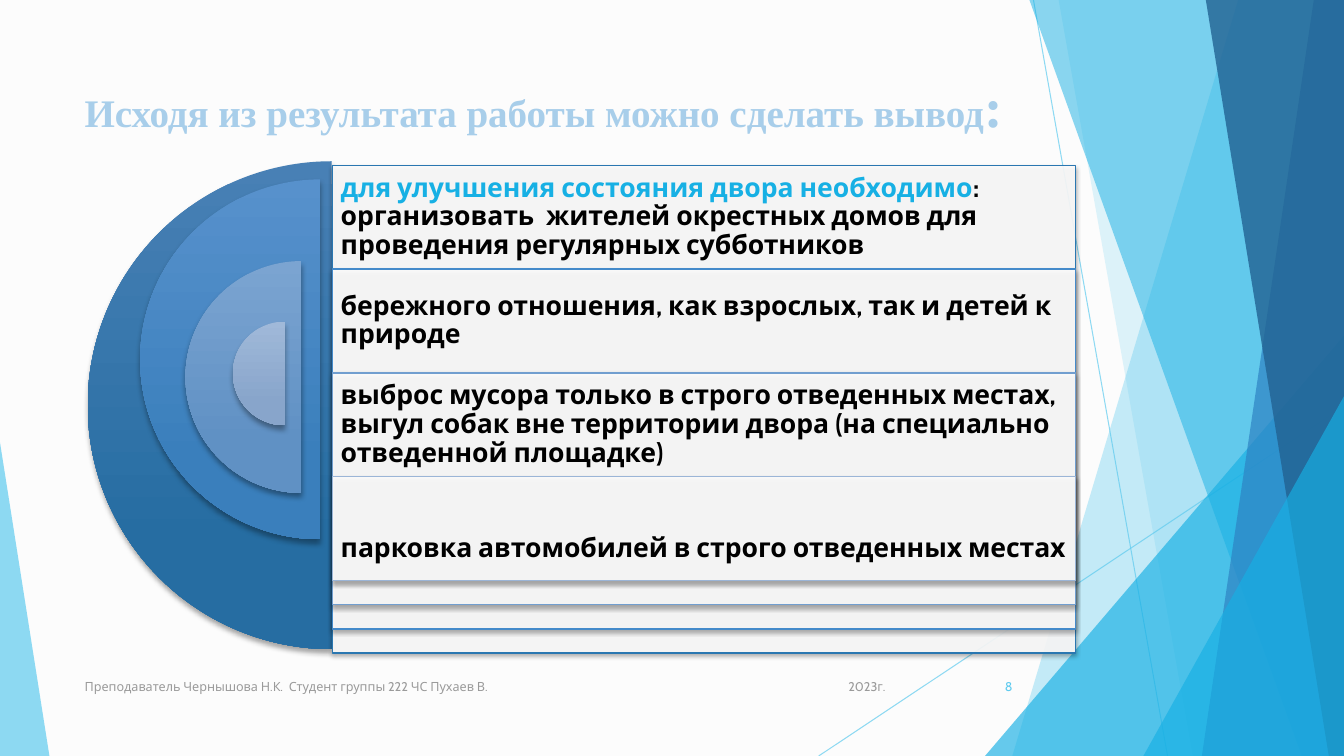
from dataclasses import dataclass

from lxml import etree
from pptx import Presentation
from pptx import util as u
from pptx.dml.color import RGBColor
from pptx.enum import shapes, text
from pptx.oxml.ns import qn

WIDTH, HEIGHT = 13.33, 7.5


@dataclass(frozen=True)
class Theme:
    background: str = "FCFCFC"
    sky: str = "5FCBEF"
    cyan: str = "17B0E4"
    blue: str = "2E83C3"
    navy: str = "226292"
    title: str = "A8CEEA"
    body: str = "000000"
    footer: str = "9A9A9A"
    black: str = "000000"
    serif: str = "Times New Roman"
    sans: str = "Cabin"
    title_size: float = 27.9
    colon_size: float = 39.6
    body_size: float = 19
    footer_size: float = 9


class SlideBuilder:
    def __init__(self, deck, theme):
        self.theme = theme
        self.page = deck.slides.add_slide(deck.slide_layouts[6])
        background = self.page.background.fill
        background.solid()
        background.fore_color.rgb = RGBColor.from_string(theme.background)

    def set_alpha(self, parent, percent):
        """Make every plain colour below parent partly transparent."""
        for color in parent.iter(qn("a:srgbClr")):
            etree.SubElement(color, qn("a:alpha"), val=str(percent * 1000))

    def paint(self, shape, color, alpha):
        shape.shadow.inherit = False
        shape.fill.solid()
        shape.fill.fore_color.rgb = RGBColor.from_string(color)
        self.set_alpha(shape.fill._xPr.find(qn("a:solidFill")), alpha)
        shape.line.fill.background()

    def drop_shadow(self, shape, blur, distance):
        shape.shadow.inherit = False
        effects = shape._element.spPr.find(qn("a:effectLst"))
        shadow = etree.SubElement(
            effects, qn("a:outerShdw"), blurRad=str(u.Pt(blur)),
            dist=str(u.Pt(distance)), dir="5400000", rotWithShape="0")
        etree.SubElement(shadow, qn("a:srgbClr"), val=self.theme.black)
        self.set_alpha(shadow, 35)

    def preset(self, kind, left, top, width, height):
        return self.page.shapes.add_shape(
            kind, u.Inches(left), u.Inches(top), u.Inches(width), u.Inches(height))

    def ray(self, start, end):
        line = self.page.shapes.add_connector(
            shapes.MSO_CONNECTOR.STRAIGHT, *map(u.Inches, start + end))
        line.line.color.rgb = RGBColor.from_string(self.theme.sky)
        line.line.width = u.Pt(0.75)
        properties = line._element.spPr
        self.set_alpha(properties, 70)
        etree.SubElement(properties, qn("a:effectLst"))

    def facet(self, top_left, bottom_left, color, alpha):
        """Fill the area from a slanted edge to the right side of the slide."""
        corners = [(WIDTH, 0), (WIDTH, HEIGHT), (bottom_left, HEIGHT)]
        outline = self.page.shapes.build_freeform(u.Inches(top_left), 0)
        outline.add_line_segments([(u.Inches(x), u.Inches(y)) for x, y in corners])
        self.paint(outline.convert_to_shape(), color, alpha)

    def corner(self, left, top, width, apex, color, alpha):
        triangle = self.preset(shapes.MSO_SHAPE.ISOSCELES_TRIANGLE,
                               left, top, width, HEIGHT - top)
        triangle.adjustments[0] = apex
        self.paint(triangle, color, alpha)

    def half_disc(self, left, top, diameter, light, dark):
        disc = self.preset(shapes.MSO_SHAPE.PIE, left, top, diameter, diameter)
        disc.adjustments[0], disc.adjustments[1] = 54, 162
        disc.fill.gradient()
        disc.fill.gradient_angle = 270
        for stop, color, position in zip(disc.fill.gradient_stops, (light, dark), (0, 0.78)):
            stop.color.rgb = RGBColor.from_string(color)
            stop.position = position
        disc.line.fill.background()
        self.drop_shadow(disc, 4, 3)

    def panel(self, left, top, width, height, border):
        panel = self.preset(shapes.MSO_SHAPE.RECTANGLE, left, top, width, height)
        self.paint(panel, self.theme.background, 90)
        panel.line.color.rgb = RGBColor.from_string(border)
        panel.line.width = u.Pt(1)
        self.drop_shadow(panel, 3, 2)

    def label(self, left, top, width, height, spans, font, bold=False,
              anchor=text.MSO_ANCHOR.MIDDLE, align=text.PP_ALIGN.LEFT):
        """Add one paragraph made of (wording, size, colour) spans."""
        box = self.page.shapes.add_textbox(
            u.Inches(left), u.Inches(top), u.Inches(width), u.Inches(height))
        frame = box.text_frame
        frame.word_wrap = True
        frame.vertical_anchor = anchor
        para = frame.paragraphs[0]
        para.alignment = align
        for wording, size, color in spans:
            span = para.add_run()
            span.text = wording
            span.font.size = u.Pt(size)
            span.font.name = font
            span.font.bold = bold
            span.font.color.rgb = RGBColor.from_string(color)
        return frame

    def conclusion(self, left, top, width, height, spans, top_inset):
        frame = self.label(left, top, width, height, spans, self.theme.sans, bold=True)
        frame.margin_left = frame.margin_right = frame.margin_bottom = u.Inches(0.08)
        frame.margin_top = u.Inches(top_inset)
        frame.paragraphs[0].line_spacing = 0.9


def add_backdrop(slide):
    theme = slide.theme
    slide.ray((10.25, 0), (11.58, HEIGHT))
    slide.ray((WIDTH, 4.03), (8.12, HEIGHT))
    slide.facet(12.28, 10.04, theme.sky, 36)
    slide.facet(10.5, 11.83, theme.sky, 20)
    slide.corner(9.77, 3.33, 3.56, 1, theme.cyan, 66)
    slide.facet(10.21, 12.91, theme.cyan, 50)
    slide.facet(13.03, 11.92, theme.blue, 70)
    slide.facet(11.96, 13.18, theme.navy, 80)
    slide.corner(11.34, 3.93, 1.99, 1, theme.cyan, 66)
    slide.corner(0, 4.39, 0.49, 0, theme.sky, 70)


def add_conclusions(slide):
    theme = slide.theme
    left, first_top, width, row, step = 3.3, 1.64, 7.37, 1.03, 1.27
    # disc left, disc top, light, dark, border, top inset, (wording, colour) spans
    rows = [
        (0.87, 1.6, "4880B5", "266DA2", "2A77B1", 0.08,
         [("для улучшения состояния двора необходимо", theme.cyan),
          (": организовать  жителей окрестных домов для проведения регулярных субботников",
           theme.body)]),
        (1.39, 1.78, "5791CC", "3A7FBC", "448ACA", 0.08,
         [("бережного отношения, как взрослых, так и детей к природе", theme.body)]),
        (1.84, 2.59, "7BA4D1", "6091C4", "719ECF", 0.08,
         [("выброс мусора только в строго отведенных местах, выгул собак вне "
           "территории двора (на специально отведенной площадке)", theme.body)]),
        (2.31, 3.19, "A0B9D9", "88A5CB", "9BB5D7", 0.49,
         [("парковка автомобилей в строго отведенных местах", theme.body)]),
    ]
    for index, (disc_left, disc_top, light, dark, border, inset, wording) in enumerate(rows):
        size = row + step * (len(rows) - 1 - index)
        top = first_top + row * index
        spans = [(part, theme.body_size, color) for part, color in wording]
        slide.half_disc(disc_left, disc_top, size, light, dark)
        slide.panel(left, top, width, size, border)
        slide.conclusion(left, top, width, row, spans, inset)


def add_title_and_footer(slide):
    theme = slide.theme
    slide.label(0.74, 0.67, 9.4, 1.35,
                [("Исходя из результата работы можно сделать вывод",
                  theme.title_size, theme.title),
                 (":", theme.colon_size, theme.title)],
                theme.serif, bold=True, anchor=text.MSO_ANCHOR.TOP)
    right = text.PP_ALIGN.RIGHT
    for left, width, wording, color, align in [
        (7.88, 1, "2023г.", theme.footer, right),
        (0.74, 6.89, "Преподаватель Чернышова Н.К.  Студент группы 222 ЧС Пухаев В.",
         theme.footer, text.PP_ALIGN.LEFT),
        (9.39, 0.75, "8", theme.sky, right),
    ]:
        slide.label(left, 6.61, width, 0.4, [(wording, theme.footer_size, color)],
                    theme.sans, align=align)


def main():
    deck = Presentation()
    deck.slide_width, deck.slide_height = u.Inches(WIDTH), u.Inches(HEIGHT)
    slide = SlideBuilder(deck, Theme())
    add_backdrop(slide)
    add_title_and_footer(slide)
    add_conclusions(slide)
    deck.save("out.pptx")


if __name__ == "__main__":
    main()
